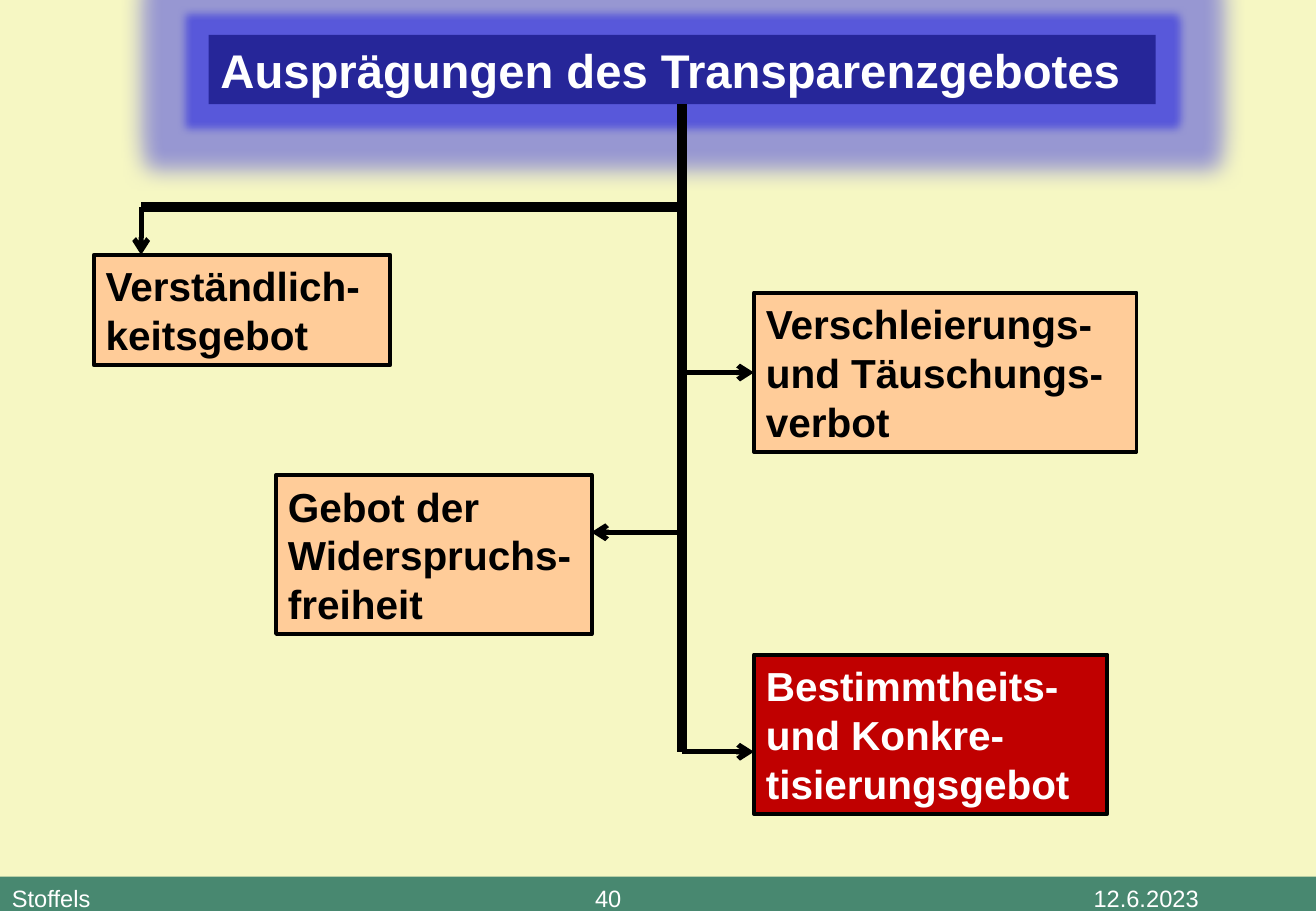
from dataclasses import dataclass

from lxml.etree import SubElement
from pptx import Presentation
from pptx.dml.color import RGBColor
from pptx.enum.shapes import MSO_CONNECTOR, MSO_SHAPE
from pptx.enum.text import MSO_ANCHOR, PP_ALIGN
from pptx.oxml.ns import qn
from pptx.util import Cm, Pt


@dataclass(frozen=True)
class Theme:
    font: str = "Arial"
    background: str = "F6F7C3"
    footer: str = "488870"
    title: str = "262699"
    inner_glow: str = "5858DA"
    outer_glow: str = "9797D2"
    box: str = "FFCC99"
    highlight: str = "C00000"
    dark: str = "000000"
    light: str = "FFFFFF"
    title_size: int = 28
    box_size: int = 24
    footer_size: int = 14
    border: float = 2.25
    trunk: float = 6
    branch: float = 3


THEME = Theme()
WIDTH, HEIGHT = 27.51, 19.05


def color(value):
    return RGBColor.from_string(value)


def add_box(slide, box, fill, border=None):
    shape = slide.shapes.add_shape(MSO_SHAPE.RECTANGLE, *map(Cm, box))
    shape.shadow.inherit = False
    shape.fill.solid()
    shape.fill.fore_color.rgb = color(fill)
    if border:
        shape.line.color.rgb = color(THEME.dark)
        shape.line.width = Pt(border)
    else:
        shape.line.fill.background()
    return shape


def write(shape, text, *, size, ink, bold=False, anchor=MSO_ANCHOR.MIDDLE,
          top=0.13, bottom=0.13, spacing=None):
    frame = shape.text_frame
    frame.word_wrap = True
    frame.vertical_anchor = anchor
    frame.margin_left = frame.margin_right = Cm(0.25)
    frame.margin_top, frame.margin_bottom = Cm(top), Cm(bottom)
    paragraph = frame.paragraphs[0]
    paragraph.alignment = PP_ALIGN.LEFT
    if spacing:
        paragraph.line_spacing = Pt(size * spacing)
    run = paragraph.add_run()
    run.text = text
    run.font.name = THEME.font
    run.font.size = Pt(size)
    run.font.bold = bold
    run.font.color.rgb = color(ink)
    return paragraph


def add_glow(shape, radius, tint):
    effects = shape._element.spPr.find(qn("a:effectLst"))
    glow = SubElement(effects, qn("a:glow"), rad=str(Cm(radius)))
    SubElement(glow, qn("a:srgbClr"), val=tint)


def add_line(slide, start, end, width, arrow=False):
    line = slide.shapes.add_connector(MSO_CONNECTOR.STRAIGHT, *map(Cm, start + end))
    line.line.color.rgb = color(THEME.dark)
    line.line.width = Pt(width)
    if arrow:
        SubElement(line.line._get_or_add_ln(), qn("a:tailEnd"), type="arrow")
    SubElement(line._element.spPr, qn("a:effectLst"))


def add_footer(slide, box, author, number, date):
    bar = add_box(slide, box, THEME.footer)
    paragraph = write(bar, f"{author}\t{number}\t{date}", size=THEME.footer_size,
                      ink=THEME.light, anchor=MSO_ANCHOR.TOP, top=0.16, bottom=0)
    tabs = SubElement(paragraph._p.get_or_add_pPr(), qn("a:tabLst"))
    for position in (12.19, 22.61):
        SubElement(tabs, qn("a:tab"), pos=str(Cm(position)), algn="l")


def add_title(slide, box, text):
    for radius, tint in ((0.95, THEME.outer_glow), (0.34, THEME.inner_glow)):
        title = add_box(slide, box, THEME.title)
        add_glow(title, radius, tint)
    write(title, text, size=THEME.title_size, ink=THEME.light, bold=True, spacing=1.2)


def add_tree(slide, box):
    """Draw the trunk down the box and hang the four requirements on it."""
    left, top, width, height = box
    trunk = left + width / 2
    bottom = top + height
    right_edge = trunk + 1.5
    requirements = (
        ("Verständlich-keitsgebot", (1.96, 5.33, 6.2, 2.31), False),
        ("Gebot der Widerspruchs-freiheit", (5.77, 9.93, 6.6, 3.33), False),
        ("Bestimmtheits- und Konkre-tisierungsgebot",
         (right_edge, 13.69, 7.39, 3.33), True),
        ("Verschleierungs- und Täuschungs-verbot",
         (right_edge, 6.12, 8, 3.33), False),
    )
    for text, place, highlighted in requirements:
        shape = add_box(slide, place, THEME.highlight if highlighted else THEME.box,
                        THEME.border)
        write(shape, text, size=THEME.box_size, bold=True, spacing=1.2,
              ink=THEME.light if highlighted else THEME.dark)

    corner = (2.95, 4.32)
    add_line(slide, (trunk, top), (trunk, bottom), THEME.trunk)
    add_line(slide, (trunk, corner[1]), corner, THEME.trunk)
    add_line(slide, corner, (corner[0], 5.33), THEME.branch, arrow=True)
    for y, end in ((7.79, right_edge), (11.13, 12.36), (bottom, right_edge)):
        add_line(slide, (trunk, y), (end, y), THEME.branch, arrow=True)


def main():
    presentation = Presentation()
    presentation.slide_width, presentation.slide_height = Cm(WIDTH), Cm(HEIGHT)
    slide = presentation.slides.add_slide(presentation.slide_layouts[6])
    slide.background.fill.solid()
    slide.background.fill.fore_color.rgb = color(THEME.background)

    title_box = (4.36, 0.73, 19.8, 1.45)
    left, top, width, height = title_box
    add_footer(slide, (0, 18.33, WIDTH, HEIGHT - 18.33), "Stoffels", "40", "12.6.2023")
    add_title(slide, title_box, "Ausprägungen des Transparenzgebotes")
    add_tree(slide, (left, top + height, width, 13.54))
    presentation.save("out.pptx")


if __name__ == "__main__":
    main()
